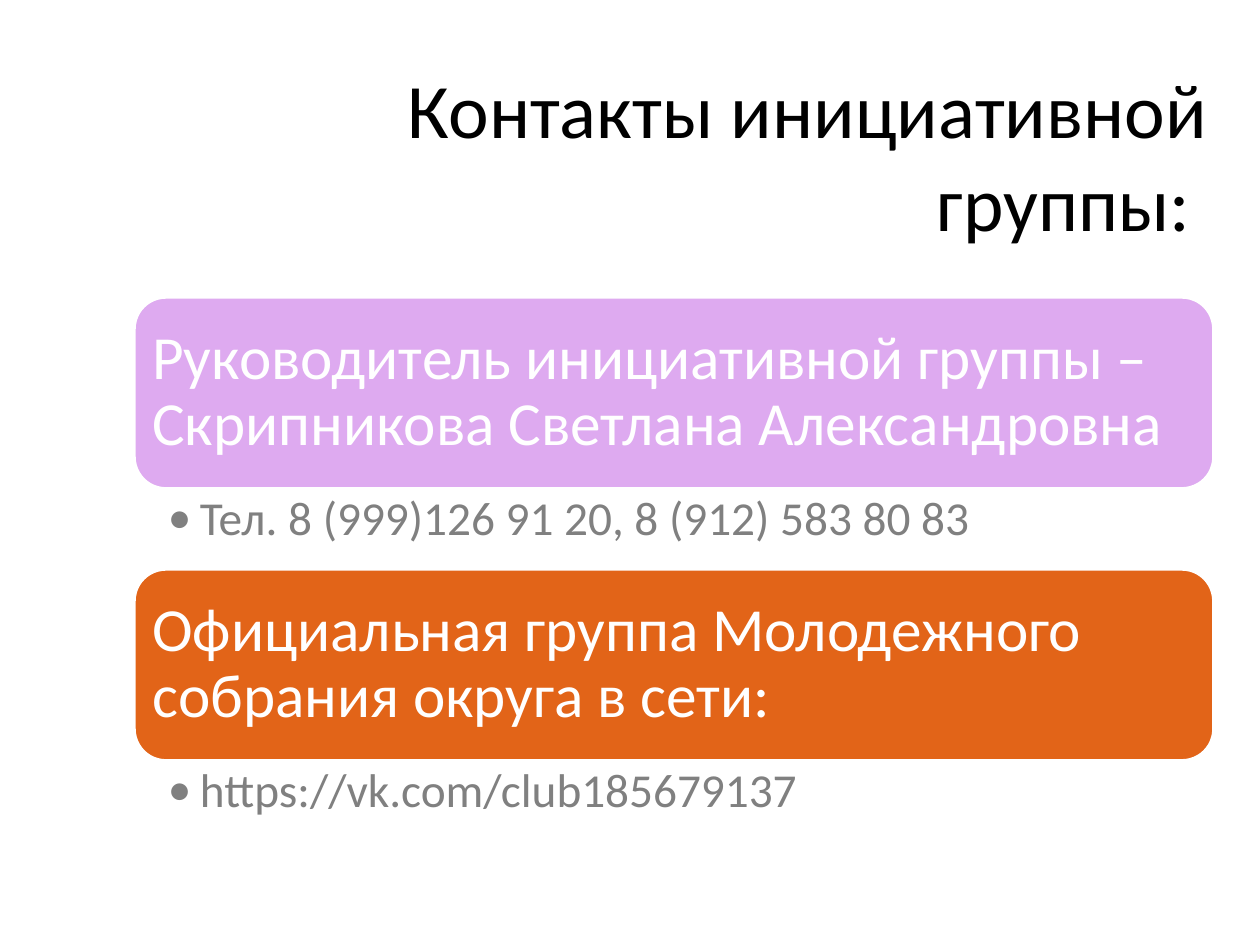
from dataclasses import dataclass

from lxml.etree import SubElement
from pptx import Presentation
from pptx.dml.color import RGBColor
from pptx.enum.shapes import MSO_SHAPE as Preset
from pptx.enum.text import MSO_ANCHOR as Anchor, PP_ALIGN as Align
from pptx.oxml.ns import qn
from pptx.util import Pt

PX = 914400 // 126


@dataclass(frozen=True)
class Theme:
    font: str = "Calibri"
    title_size: int = 44
    heading_size: int = 35
    detail_size: int = 27
    black: str = "000000"
    white: str = "FFFFFF"
    grey: str = "808080"
    lilac: str = "DEAAF0"
    orange: str = "E26418"


THEME = Theme()
LEFT, TOP, WIDTH = 134, 297, 1080
HEADING_HEIGHT, DETAIL_HEIGHT = 192, 80
CONTACTS = [
    ("Руководитель инициативной группы – Скрипникова Светлана Александровна",
     "Тел. 8 (999)126 91 20, 8 (912) 583 80 83", THEME.lilac),
    ("Официальная группа Молодежного собрания округа в сети:",
     "https://vk.com/club185679137", THEME.orange),
]


def px(*lengths):
    return [length * PX for length in lengths]


def set_frame(frame, anchor, side, edge):
    frame.word_wrap = True
    frame.vertical_anchor = anchor
    frame.margin_left = frame.margin_right = side * PX
    frame.margin_top = frame.margin_bottom = edge * PX


def write(paragraph, text, size, color, align=Align.LEFT):
    paragraph.alignment = align
    run = paragraph.add_run()
    run.text = text
    run.font.name = THEME.font
    run.font.size = Pt(size)
    run.font.color.rgb = RGBColor.from_string(color)


def add_bullet(paragraph, indent):
    properties = paragraph._p.get_or_add_pPr()
    properties.set("marL", str(indent * PX))
    properties.set("indent", str(-indent * PX))
    SubElement(properties, qn("a:buFont")).set("typeface", THEME.font)
    SubElement(properties, qn("a:buChar")).set("char", "•")


def add_title(slide, text):
    title = slide.shapes.add_textbox(*px(233, 45, 988, 218))
    set_frame(title.text_frame, Anchor.MIDDLE, 13, 6)
    write(title.text_frame.paragraphs[0], text, THEME.title_size, THEME.black, Align.RIGHT)


def add_heading(slide, text, top, color):
    banner = slide.shapes.add_shape(
        Preset.ROUNDED_RECTANGLE, *px(LEFT, top, WIDTH, HEADING_HEIGHT))
    banner.shadow.inherit = False
    banner.fill.solid()
    banner.fill.fore_color.rgb = RGBColor.from_string(color)
    banner.line.color.rgb = RGBColor.from_string(THEME.white)
    banner.line.width = Pt(2)
    set_frame(banner.text_frame, Anchor.MIDDLE, 9, 10)
    paragraph = banner.text_frame.paragraphs[0]
    paragraph.line_spacing = 0.9
    write(paragraph, text, THEME.heading_size, THEME.white)


def add_detail(slide, text, top):
    detail = slide.shapes.add_textbox(*px(LEFT, top, WIDTH, DETAIL_HEIGHT))
    set_frame(detail.text_frame, Anchor.TOP, 34, 6)
    paragraph = detail.text_frame.paragraphs[0]
    add_bullet(paragraph, 32)
    paragraph.line_spacing = 0.9
    write(paragraph, text, THEME.detail_size, THEME.grey)


def main():
    deck = Presentation()
    deck.slide_width, deck.slide_height = px(1260, 945)
    slide = deck.slides.add_slide(deck.slide_layouts[6])
    add_title(slide, "Контакты инициативной группы: ")
    for row, (heading, detail, color) in enumerate(CONTACTS):
        top = TOP + row * (HEADING_HEIGHT + DETAIL_HEIGHT)
        add_heading(slide, heading, top, color)
        add_detail(slide, detail, top + HEADING_HEIGHT)
    deck.save("out.pptx")


if __name__ == "__main__":
    main()
